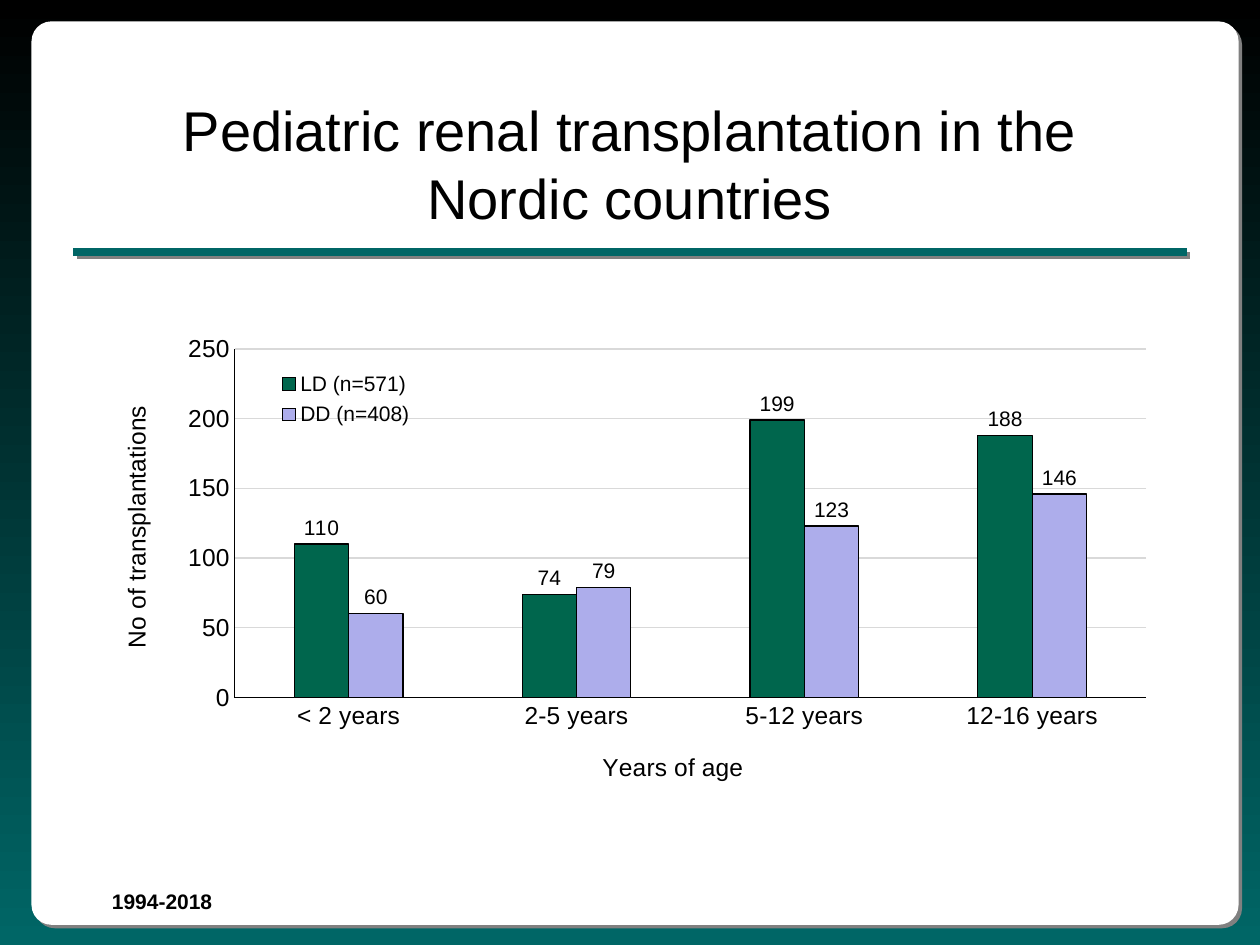
from lxml import etree
from pptx import Presentation
from pptx.chart.data import CategoryChartData
from pptx.dml.color import RGBColor
from pptx.enum.chart import XL_CHART_TYPE, XL_LABEL_POSITION, XL_LEGEND_POSITION, XL_TICK_MARK
from pptx.enum.shapes import MSO_CONNECTOR, MSO_SHAPE
from pptx.enum.text import MSO_ANCHOR, PP_ALIGN
from pptx.oxml.ns import qn
from pptx.util import Inches, Pt

COLUMN = XL_CHART_TYPE.COLUMN_CLUSTERED
LABEL_TOP = XL_LABEL_POSITION.OUTSIDE_END
LEGEND_RIGHT = XL_LEGEND_POSITION.RIGHT
NO_TICK = XL_TICK_MARK.NONE
STRAIGHT = MSO_CONNECTOR.STRAIGHT
ROUNDED = MSO_SHAPE.ROUNDED_RECTANGLE
MIDDLE = MSO_ANCHOR.MIDDLE
LEFT, CENTER = PP_ALIGN.LEFT, PP_ALIGN.CENTER

FONT = "Arial"
COLORS = {"text": "000000", "teal": "006666", "panel": "FFFFFF", "shadow": "808080",
          "grid": "D9D9D9", "living": "00664D", "deceased": "ADADEB"}

TITLE = "Pediatric renal transplantation in the Nordic countries"
PERIOD = "1994-2018"
AGES = ["< 2 years", "2-5 years", "5-12 years", "12-16 years"]
DONORS = [("LD (n=571)", [110, 74, 199, 188], "living"),
          ("DD (n=408)", [60, 79, 123, 146], "deceased")]
AXIS_TITLES = {"category": ("Years of age", (0.47, 0.82)),
               "value": ("No of transplantations", (0.02, 0.146))}
PLOT_BOX = (0.131, 0.044, 0.851, 0.68)
LEGEND_BOX = (0.15, 0.075, 0.17, 0.135)


def rgb(name):
    return RGBColor.from_string(COLORS[name])


def style_font(font, size, bold=False):
    font.name, font.size, font.bold = FONT, Pt(size), bold
    font.color.rgb = rgb("text")


def write(tf, text, size=12, bold=False, align=LEFT):
    tf.word_wrap = True
    p = tf.paragraphs[0]
    p.alignment = align
    r = p.add_run()
    r.text = text
    style_font(r.font, size, bold)


def style_line(line, color="text", width=0.75):
    line.color.rgb = rgb(color)
    line.width = Pt(width)


def add_shadow(sp):
    effects = etree.SubElement(sp._element.spPr, qn("a:effectLst"))
    shadow = etree.SubElement(effects, qn("a:outerShdw"), dist=str(Pt(2.8)),
                              dir="2700000", algn="ctr", rotWithShape="0")
    etree.SubElement(shadow, qn("a:srgbClr"), val=COLORS["shadow"])


def place(el, box, index=1, inner=False):
    layout = el.find(qn("c:layout"))
    if layout is None:
        layout = etree.Element(qn("c:layout"))
        el.insert(index, layout)
    manual = etree.SubElement(layout, qn("c:manualLayout"))
    if inner:
        etree.SubElement(manual, qn("c:layoutTarget"), val="inner")
    for key in "xy":
        etree.SubElement(manual, qn(f"c:{key}Mode"), val="edge")
    for key, share in zip("xywh", box):
        etree.SubElement(manual, qn(f"c:{key}"), val=str(share))


def add_chart(slide):
    data = CategoryChartData()
    data.categories = AGES
    for name, values, _ in DONORS:
        data.add_series(name, values)
    chart = slide.shapes.add_chart(COLUMN, Inches(0.75), Inches(2.59),
                                   Inches(8.5), Inches(4.07), data).chart
    style_font(chart.font, 10)
    chart.has_title = False
    place(chart._chartSpace.chart.plotArea, PLOT_BOX, index=0, inner=True)

    plot = chart.plots[0]
    plot.gap_width, plot.overlap, plot.vary_by_categories = 219, 0, False
    for series, (_, _, color) in zip(plot.series, DONORS):
        series.format.fill.solid()
        series.format.fill.fore_color.rgb = rgb(color)
        style_line(series.format.line)
        labels = series.data_labels
        labels.show_value, labels.position = True, LABEL_TOP
        style_font(labels.font, 12)

    axes = {"category": chart.category_axis, "value": chart.value_axis}
    for key, (text, corner) in AXIS_TITLES.items():
        axis = axes[key]
        axis.major_tick_mark = axis.minor_tick_mark = NO_TICK
        style_font(axis.tick_labels.font, 14)
        style_line(axis.format.line)
        write(axis.axis_title.text_frame, text, 14, align=CENTER)
        place(axis.axis_title._element, corner)
    value = axes["value"]
    value.minimum_scale, value.maximum_scale, value.major_unit = 0, 250, 50
    style_line(value.major_gridlines.format.line, "grid")

    chart.has_legend = True
    legend = chart.legend
    legend.position, legend.include_in_layout = LEGEND_RIGHT, False
    style_font(legend.font, 12)
    place(legend._element, LEGEND_BOX)


def main():
    prs = Presentation()
    prs.slide_width, prs.slide_height = Inches(10), Inches(7.5)
    slide = prs.slides.add_slide(prs.slide_layouts[5])
    fill = slide.background.fill
    fill.gradient()
    fill.gradient_angle = 270
    for stop, color, position in zip(fill.gradient_stops, ("text", "teal"), (0, 1)):
        stop.color.rgb = rgb(color)
        stop.position = position

    panel = slide.shapes.add_shape(ROUNDED, Inches(0.25), Inches(0.17),
                                   Inches(9.58), Inches(7.17))
    panel.adjustments[0] = 0.022
    panel.fill.solid()
    panel.fill.fore_color.rgb = rgb("panel")
    panel.line.fill.background()
    add_shadow(panel)

    period = slide.shapes.add_textbox(Inches(0.79), Inches(7), Inches(1.47), Inches(0.3))
    write(period.text_frame, PERIOD, bold=True)

    rule = slide.shapes.add_connector(STRAIGHT, Inches(0.58), Inches(2), Inches(9.42), Inches(2))
    style_line(rule.line, "teal", 4.5)
    add_shadow(rule)

    title = slide.shapes.title
    title.left, title.top = Inches(0.75), Inches(0.67)
    title.width, title.height = Inches(8.5), Inches(1.25)
    title.text_frame.vertical_anchor = MIDDLE
    write(title.text_frame, TITLE, 32, align=CENTER)
    slide.shapes._spTree.append(title._element)

    add_chart(slide)
    prs.save("out.pptx")


if __name__ == "__main__":
    main()
